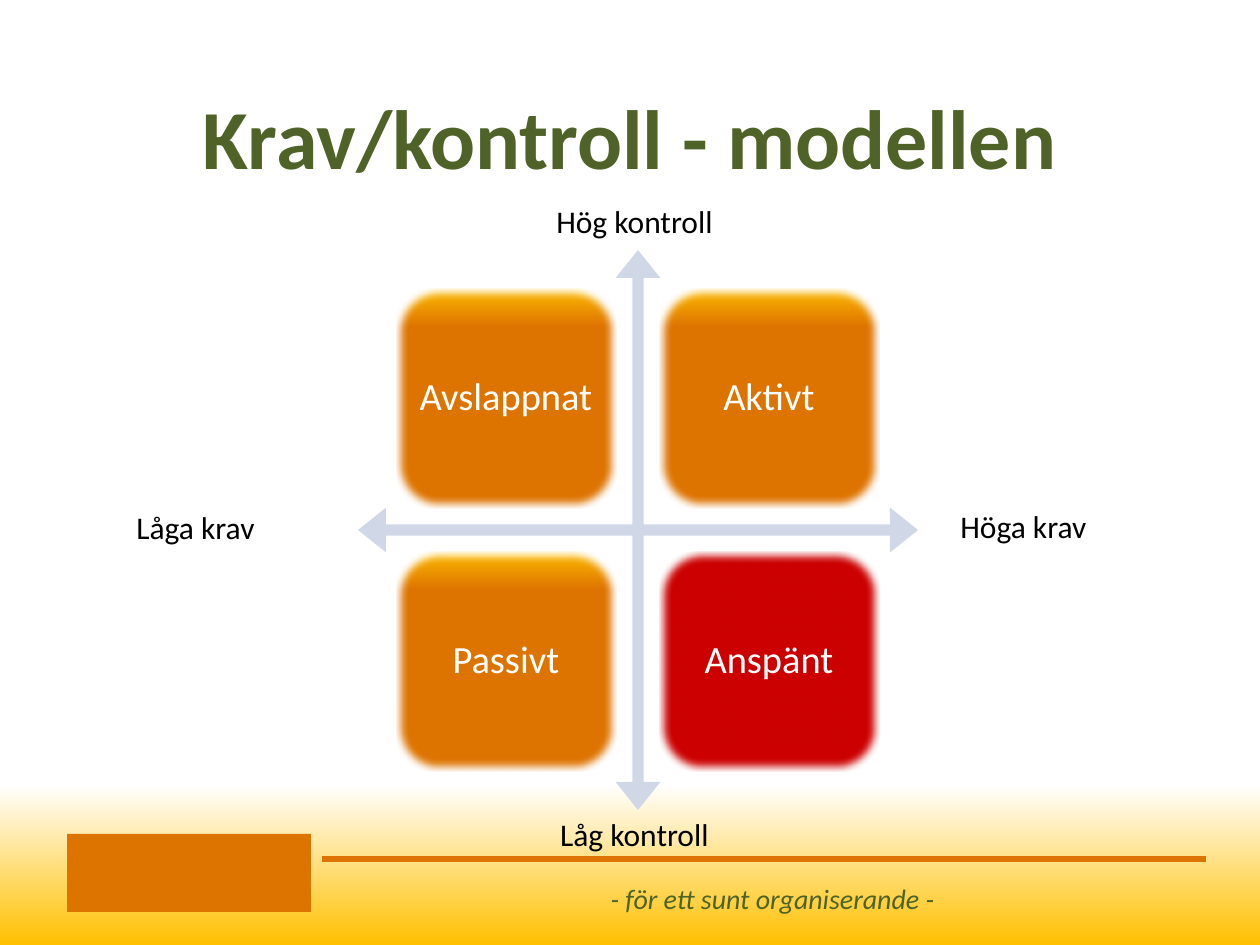
from dataclasses import dataclass

from lxml import etree
from pptx import Presentation
from pptx.dml.color import RGBColor
from pptx.enum.shapes import MSO_CONNECTOR, MSO_SHAPE
from pptx.enum.text import MSO_ANCHOR, PP_ALIGN
from pptx.oxml.ns import qn
from pptx.util import Emu, Pt

PX = 914400 / 126  # EMU in one px

WHITE = RGBColor(0xFF, 0xFF, 0xFF)
BLACK = RGBColor(0x00, 0x00, 0x00)
GREEN = RGBColor(0x4F, 0x62, 0x28)
ORANGE = RGBColor(0xDE, 0x74, 0x00)
GOLD = RGBColor(0xFF, 0xC0, 0x00)
RED = RGBColor(0xCC, 0x00, 0x00)
PALE = RGBColor(0xD0, 0xD8, 0xE8)

TITLE = {"name": "Calibri", "size": Pt(48), "bold": True}
TAG = {"name": "Calibri", "size": Pt(16), "italic": True}
LABEL = {"name": "Calibri", "size": Pt(18)}
TILE = {"name": "Calibri", "size": Pt(22)}

MID, TOP = MSO_ANCHOR.MIDDLE, MSO_ANCHOR.TOP
CENTER, LEFT = PP_ALIGN.CENTER, PP_ALIGN.LEFT


@dataclass
class Box:
    x: int
    y: int
    w: int
    h: int

    def emu(self) -> list:
        return [px(n) for n in (self.x, self.y, self.w, self.h)]


@dataclass
class Label:
    text: str
    box: Box
    align: PP_ALIGN


@dataclass
class Tile:
    text: str
    col: int
    row: int
    hot: bool = False


def px(n: int) -> Emu:
    return Emu(round(n * PX))


def style(font, look: dict, color: RGBColor) -> None:
    for key, value in look.items():
        setattr(font, key, value)
    font.color.rgb = color


def write(frame, text: str, look: dict, color: RGBColor,
          align=CENTER, anchor=MID) -> None:
    frame.word_wrap = True
    frame.vertical_anchor = anchor
    para = frame.paragraphs[0]
    para.alignment = align
    run = para.add_run()
    run.text = text
    style(run.font, look, color)


def text_box(slide, box: Box, text: str, look: dict, color: RGBColor,
             align=CENTER, anchor=MID) -> None:
    shape = slide.shapes.add_textbox(*box.emu())
    write(shape.text_frame, text, look, color, align, anchor)


def plain(slide, kind: MSO_SHAPE, box: Box, color: RGBColor):
    """Add a flat shape without outline or shadow."""
    shape = slide.shapes.add_shape(kind, *box.emu())
    shape.fill.solid()
    shape.fill.fore_color.rgb = color
    shape.line.fill.background()
    shape.shadow.inherit = False
    return shape


def blend(fill, start: RGBColor, at: float, angle: int) -> None:
    """Hold the start colour up to a point, then fade to gold."""
    fill.gradient()
    fill.gradient_angle = angle
    for stop, color, place in zip(fill.gradient_stops, (start, GOLD), (at, 1)):
        stop.color.rgb = color
        stop.position = place


def draw_tile(slide, tile: Tile) -> None:
    side, pitch = 224, 263
    box = Box(394 + tile.col * pitch, 286 + tile.row * pitch, side, side)
    shape = plain(slide, MSO_SHAPE.ROUNDED_RECTANGLE, box, RED)
    if not tile.hot:
        blend(shape.fill, ORANGE, 0.82, 90)
    shape.line.color.rgb = WHITE
    shape.line.width = Pt(2)
    # Soft edge
    effects = shape._element.spPr.find(qn("a:effectLst"))
    etree.SubElement(effects, qn("a:softEdge"), rad="63500")
    # Caption
    frame = shape.text_frame
    for edge in ("left", "right", "top", "bottom"):
        setattr(frame, f"margin_{edge}", px(11))
    write(frame, tile.text, TILE, WHITE)
    frame.paragraphs[0].line_spacing = 0.9


def draw_foot(slide) -> None:
    # Rule
    rule = slide.shapes.add_connector(
        MSO_CONNECTOR.STRAIGHT, px(322), px(859), px(1206), px(859))
    rule.line.color.rgb = ORANGE
    rule.line.width = Pt(3)
    etree.SubElement(rule._element.spPr, qn("a:effectLst"))
    # Tagline
    text_box(slide, Box(341, 879, 863, 39),
             "- för ett sunt organiserande -", TAG, GREEN)
    # Plain block left of the rule
    plain(slide, MSO_SHAPE.RECTANGLE, Box(67, 834, 244, 78), ORANGE)


def draw_axes(slide) -> None:
    axes = plain(slide, MSO_SHAPE.QUAD_ARROW, Box(358, 250, 560, 560), PALE)
    for i, value in enumerate((0.02, 0.04, 0.05)):
        axes.adjustments[i] = value


TILES = [
    Tile("Avslappnat", 0, 0),
    Tile("Aktivt", 1, 0),
    Tile("Passivt", 0, 1),
    Tile("Anspänt", 1, 1, hot=True),
]
LABELS = [
    Label("Hög kontroll", Box(491, 196, 287, 50), CENTER),
    Label("Höga krav", Box(948, 501, 228, 50), LEFT),
    Label("Låga krav", Box(124, 502, 228, 50), LEFT),
    Label("Låg kontroll", Box(491, 809, 287, 50), CENTER),
]


def main() -> None:
    deck = Presentation()
    deck.slide_width, deck.slide_height = px(1260), px(945)
    slide = deck.slides.add_slide(deck.slide_layouts[5])
    blend(slide.background.fill, WHITE, 0.83, 270)
    draw_foot(slide)

    # Title
    title = slide.shapes.title
    title.left, title.top, title.width, title.height = Box(63, 57, 1134, 158).emu()
    write(title.text_frame, "Krav/kontroll - modellen", TITLE, GREEN)

    # Model
    draw_axes(slide)
    for tile in TILES:
        draw_tile(slide, tile)
    for label in LABELS:
        text_box(slide, label.box, label.text, LABEL, BLACK, label.align, TOP)

    deck.save("out.pptx")


if __name__ == "__main__":
    main()
